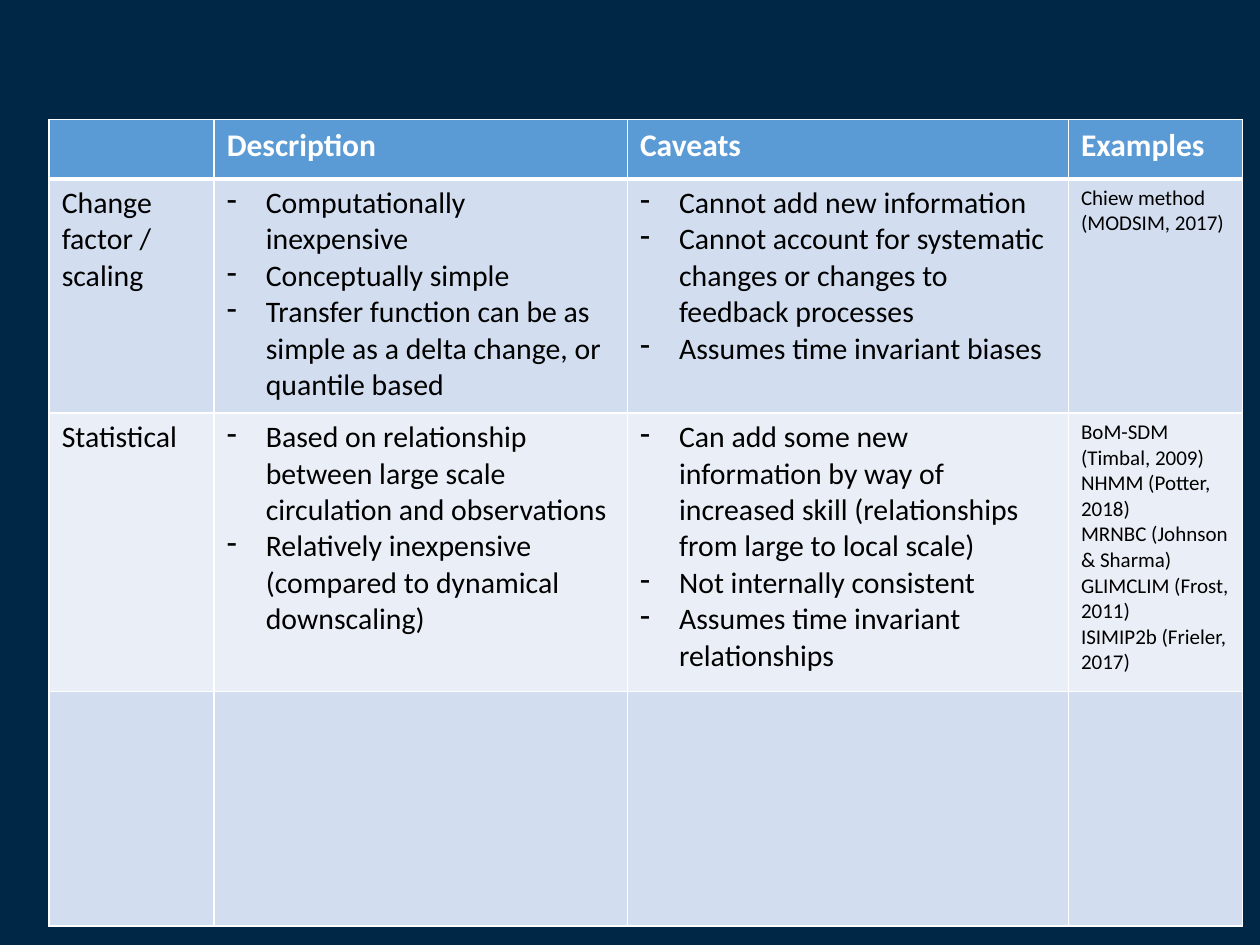
"""Build a slide with a table of downscaling methods, their caveats and examples."""
from lxml.etree import SubElement
from pptx import Presentation
from pptx.dml.color import RGBColor
from pptx.oxml.ns import qn
from pptx.util import Inches, Pt

HUES = {"back": "002745", "head": "5B9BD5", "odd": "D2DEEF", "even": "EAEFF7",
        "white": "FFFFFF", "black": "000000"}
COLS = [1.31, 3.28, 3.5, 1.38]
ROWS = [0.47, 1.86, 2.21, 1.86]
CELLS = [
    [[], ["Description"], ["Caveats"], ["Examples"]],
    [["Change factor / scaling"],
     ["Computationally inexpensive", "Conceptually simple",
      "Transfer function can be as simple as a delta change, or quantile based"],
     ["Cannot add new information",
      "Cannot account for systematic changes or changes to feedback processes",
      "Assumes time invariant biases"],
     ["Chiew method (MODSIM, 2017)"]],
    [["Statistical"],
     ["Based on relationship between large scale circulation and observations",
      "Relatively inexpensive (compared to dynamical downscaling)"],
     ["Can add some new information by way of increased skill "
      "(relationships from large to local scale)",
      "Not internally consistent", "Assumes time invariant relationships"],
     ["BoM-SDM (Timbal, 2009)", "NHMM (Potter, 2018)", "MRNBC (Johnson & Sharma)",
      "GLIMCLIM (Frost, 2011)", "ISIMIP2b (Frieler, 2017)"]],
    [[], [], [], []],
]


def color(name):
    return RGBColor.from_string(HUES[name])


def edge(cell, side, width):
    line = SubElement(cell._tc.get_or_add_tcPr(), qn(f"a:ln{side}"), w=str(Pt(width)))
    fill = SubElement(line, qn("a:solidFill"))
    SubElement(fill, qn("a:srgbClr"), val=HUES["white"])


deck = Presentation()
deck.slide_width, deck.slide_height = Inches(10), Inches(7.5)
slide = deck.slides.add_slide(deck.slide_layouts[6])
slide.background.fill.solid()
slide.background.fill.fore_color.rgb = color("back")

table = slide.shapes.add_table(
    len(ROWS), len(COLS), Inches(0.39), Inches(0.95),
    Inches(sum(COLS)), Inches(sum(ROWS))).table
for col, width in zip(table.columns, COLS):
    col.width = Inches(width)
for row, height in zip(table.rows, ROWS):
    row.height = Inches(height)

for r, line in enumerate(CELLS):
    for c, items in enumerate(line):
        cell = table.cell(r, c)
        for side in "LRTB":
            thick = (r, side) in [(0, "B"), (1, "T")]
            edge(cell, side, 3 if thick else 1)
        cell.fill.solid()
        cell.fill.fore_color.rgb = color("head" if r == 0 else "odd" if r % 2 else "even")

        frame = cell.text_frame
        frame.text = "\n".join(items)
        for para in frame.paragraphs if items else []:
            if r > 0 and c in (1, 2):
                props = para._p.get_or_add_pPr()
                props.set("marL", str(Inches(0.31)))
                props.set("indent", str(Inches(-0.31)))
                SubElement(props, qn("a:buChar"), char="-")
            font = para.font
            font.name = "Calibri"
            font.size = Pt(18 if r == 0 else 12 if c == 3 else 17)
            font.bold = r == 0
            font.color.rgb = color("white" if r == 0 else "black")

deck.save("out.pptx")
